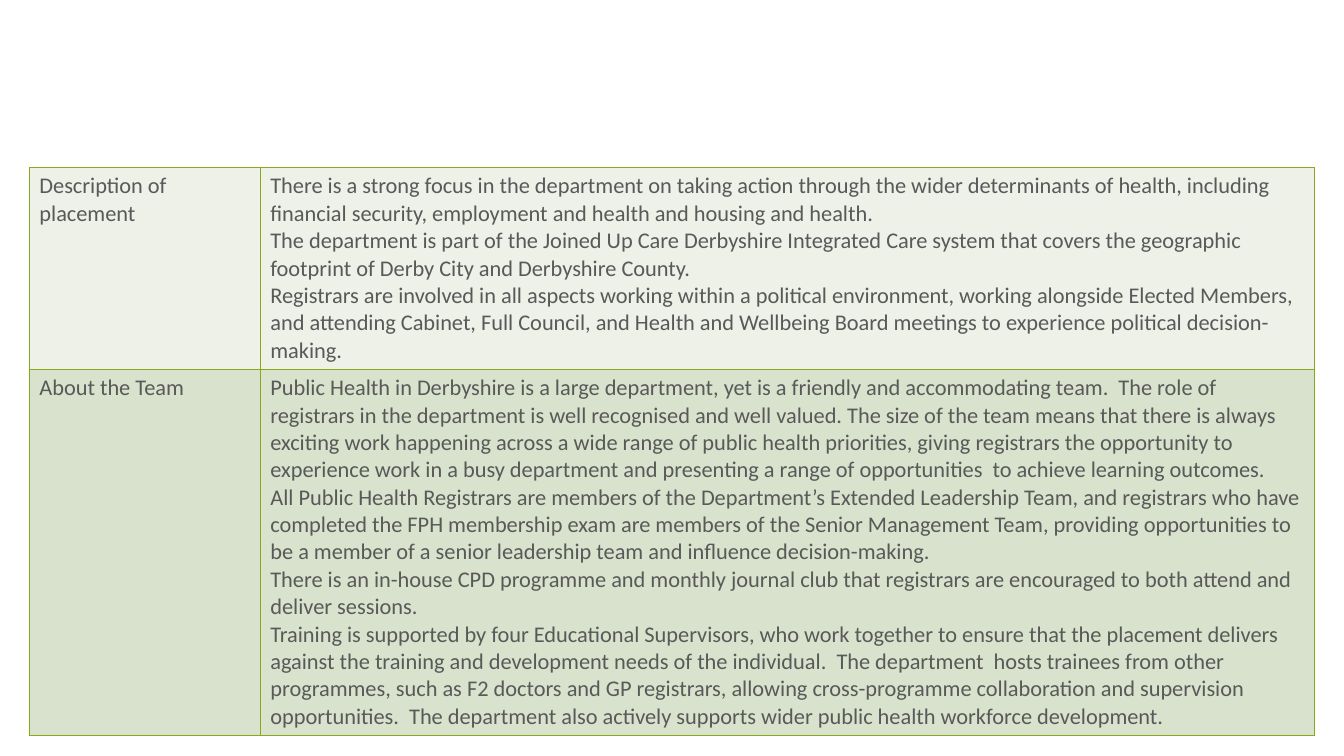
from lxml.etree import SubElement
from pptx import Presentation
from pptx.dml.color import RGBColor
from pptx.oxml.ns import qn
from pptx.util import Cm, Pt

GREY = RGBColor(0x59, 0x59, 0x59)
GREEN = RGBColor(0x87, 0xA9, 0x1B)
PALE = RGBColor(0xED, 0xF1, 0xE8)
SAGE = RGBColor(0xD9, 0xE2, 0xCD)

PLACEMENT = [
    "There is a strong focus in the department on taking action through the wider determinants of health, "
    "including financial security, employment and health and housing and health.",
    "The department is part of the Joined Up Care Derbyshire Integrated Care system that covers the "
    "geographic footprint of Derby City and Derbyshire County.",
    "Registrars are involved in all aspects working within a political environment, working alongside "
    "Elected Members, and attending Cabinet, Full Council, and Health and Wellbeing Board meetings to "
    "experience political decision-making.",
]
TEAM = [
    "Public Health in Derbyshire is a large department, yet is a friendly and accommodating team.  The role "
    "of registrars in the department is well recognised and well valued. The size of the team means that "
    "there is always exciting work happening across a wide range of public health priorities, giving "
    "registrars the opportunity to experience work in a busy department and presenting a range of "
    "opportunities  to achieve learning outcomes.",
    "All Public Health Registrars are members of the Department’s Extended Leadership Team, and registrars "
    "who have completed the FPH membership exam are members of the Senior Management Team, providing "
    "opportunities to be a member of a senior leadership team and influence decision-making.",
    "There is an in-house CPD programme and monthly journal club that registrars are encouraged to both "
    "attend and deliver sessions.",
    "Training is supported by four Educational Supervisors, who work together to ensure that the placement "
    "delivers against the training and development needs of the individual.  The department  hosts trainees "
    "from other programmes, such as F2 doctors and GP registrars, allowing cross-programme collaboration "
    "and supervision opportunities.  The department also actively supports wider public health workforce "
    "development.",
]
ROWS = [
    ("Description of placement", PLACEMENT, PALE, 5.08),
    ("About the Team", TEAM, SAGE, 9.2),
]
WIDTHS = [5.82, 26.57]


class Page:
    def __init__(self, slide, font="Calibri", size=16, color=GREY, border=GREEN):
        self.slide = slide
        self.font = font
        self.size = size
        self.color = color
        self.border = border

    def table(self, left, top, widths, rows):
        height = sum(row[3] for row in rows)
        frame = self.slide.shapes.add_table(
            len(rows), len(widths), Cm(left), Cm(top), Cm(sum(widths)), Cm(height))
        table = frame.table
        table.first_row = table.horz_banding = False
        for column, width in zip(table.columns, widths):
            column.width = Cm(width)
        for index, (label, body, fill, tall) in enumerate(rows):
            table.rows[index].height = Cm(tall)
            self.cell(table.cell(index, 0), [label], fill)
            self.cell(table.cell(index, 1), body, fill)

    def cell(self, cell, lines, fill):
        self.edges(cell)
        cell.fill.solid()
        cell.fill.fore_color.rgb = fill
        cell.text_frame.text = "\n".join(lines)
        for paragraph in cell.text_frame.paragraphs:
            for run in paragraph.runs:
                run.font.name = self.font
                run.font.size = Pt(self.size)
                run.font.color.rgb = self.color

    def edges(self, cell):
        props = cell._tc.get_or_add_tcPr()
        for side in "LRTB":
            line = SubElement(props, qn(f"a:ln{side}"), w=str(Pt(1)))
            solid = SubElement(line, qn("a:solidFill"))
            SubElement(solid, qn("a:srgbClr"), val=str(self.border))


def main():
    deck = Presentation()
    deck.slide_width = Cm(33.87)
    deck.slide_height = Cm(19.05)
    page = Page(deck.slides.add_slide(deck.slide_layouts[6]))
    page.table(0.74, 4.22, WIDTHS, ROWS)
    deck.save("out.pptx")


if __name__ == "__main__":
    main()
